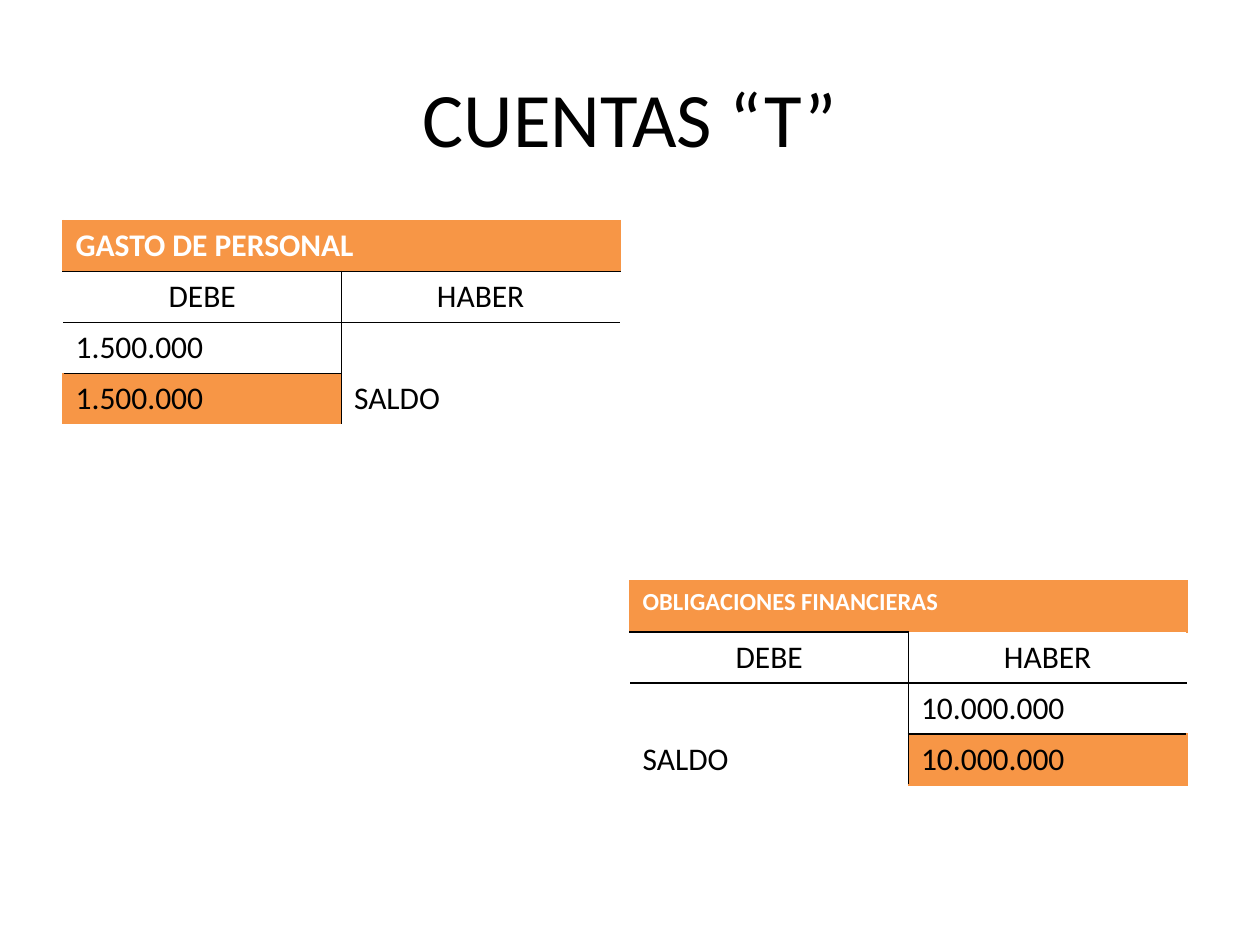
from lxml import etree
from pptx import Presentation, util as u
from pptx.dml.color import RGBColor
from pptx.enum import text
from pptx.oxml.ns import qn

COLORS = {"black": "000000", "white": "FFFFFF", "orange": "F79646"}
FONT = "Calibri"
TITLE = "CUENTAS “T”"
WIDTH, HEIGHT = 4.42, 1.62

# Each cell: text, fill, black sides, orange sides
ACCOUNTS = [
    {
        "name": "GASTO DE PERSONAL", "size": 18, "at": (0.5, 1.75),
        "header_sides": ("B", "LTR"),
        "rows": [
            [("DEBE", None, "TRB", ""), ("HABER", None, "LTB", "")],
            [("1.500.000", None, "TRB", ""), ("", None, "LT", "")],
            [("1.500.000", "orange", "TR", "L"), ("SALDO", None, "L", "")],
        ],
    },
    {
        "name": "OBLIGACIONES FINANCIERAS", "size": 14, "at": (5, 4.61),
        "header_sides": ("B", "LTR"),
        "rows": [
            [("DEBE", None, "TRB", ""), ("HABER", None, "LB", "")],
            [("", "white", "TR", ""), ("10.000.000", "white", "LTB", "")],
            [("SALDO", None, "R", ""), ("10.000.000", "orange", "LT", "RB")],
        ],
    },
]


def write(frame, words, size, color="black", bold=False, centered=False):
    para = frame.paragraphs[0]
    para.alignment = text.PP_ALIGN.CENTER if centered else text.PP_ALIGN.LEFT
    if not words:
        para.font.size = u.Pt(size)
        return
    span = para.add_run()
    span.text = words
    span.font.name = FONT
    span.font.size = u.Pt(size)
    span.font.bold = bold
    span.font.color.rgb = RGBColor.from_string(COLORS[color])


def paint(cell, fill, black_sides, orange_sides):
    if fill:
        cell.fill.solid()
        cell.fill.fore_color.rgb = RGBColor.from_string(COLORS[fill])
    else:
        cell.fill.background()
    properties = cell._tc.get_or_add_tcPr()
    for position, side in enumerate("LRTB"):
        line = etree.Element(qn(f"a:ln{side}"), w=str(u.Pt(1)))
        if side in black_sides + orange_sides:
            color = "black" if side in black_sides else "orange"
            solid = etree.SubElement(line, qn("a:solidFill"))
            etree.SubElement(solid, qn("a:srgbClr"), val=COLORS[color])
        else:
            etree.SubElement(line, qn("a:noFill"))
        properties.insert(position, line)


def add_account(page, account):
    left, top = account["at"]
    rows = account["rows"]
    table = page.shapes.add_table(
        len(rows) + 1, 2, u.Inches(left), u.Inches(top),
        u.Inches(WIDTH), u.Inches(HEIGHT)).table
    table.first_row = table.horz_banding = False

    header = table.cell(0, 0)
    header.merge(table.cell(0, 1))
    for column in range(2):
        paint(table.cell(0, column), "orange", *account["header_sides"])
    write(header.text_frame, account["name"], account["size"], "white", bold=True)

    for r, row in enumerate(rows, 1):
        for c, (words, fill, black_sides, orange_sides) in enumerate(row):
            cell = table.cell(r, c)
            paint(cell, fill, black_sides, orange_sides)
            write(cell.text_frame, words, 18, centered=r == 1)


def main():
    deck = Presentation()
    deck.slide_width, deck.slide_height = u.Inches(10), u.Inches(7.5)
    page = deck.slides.add_slide(deck.slide_layouts[6])
    box = page.shapes.add_textbox(
        u.Inches(0.5), u.Inches(0.3), u.Inches(9), u.Inches(1.25))
    box.text_frame.word_wrap = True
    box.text_frame.vertical_anchor = text.MSO_ANCHOR.MIDDLE
    write(box.text_frame, TITLE, 44, centered=True)
    for account in ACCOUNTS:
        add_account(page, account)
    deck.save("out.pptx")


if __name__ == "__main__":
    main()
